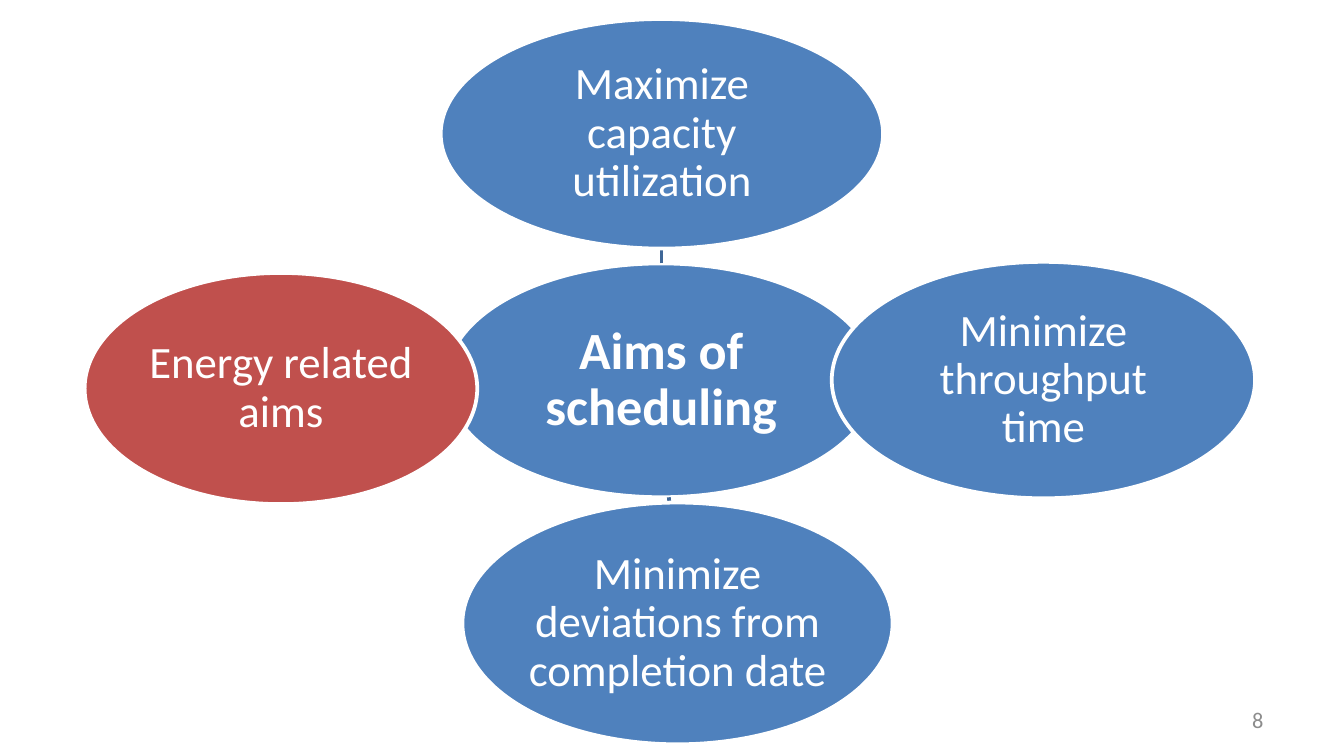
from lxml import etree
from pptx import Presentation
from pptx.dml.color import RGBColor
from pptx.enum import shapes, text
from pptx.oxml import ns
from pptx.util import Cm, Pt

BLUE = RGBColor(0x4F, 0x81, 0xBD)
RED = RGBColor(0xC0, 0x50, 0x4D)
LINK = RGBColor(0x3F, 0x67, 0x97)
WHITE = RGBColor(0xFF, 0xFF, 0xFF)
GRAY = RGBColor(0x8C, 0x8C, 0x8C)
FONT = "Calibri"

HUB = ("Aims of scheduling", (8.43, 4.98, 8.13, 4.42), BLUE)
AIMS = [
    ("Maximize capacity utilization", (8.33, 0.36, 8.36, 4.34), BLUE,
     (12.5, 4.98, 12.5, 4.7)),
    ("Minimize throughput time", (15.72, 4.95, 8, 4.47), BLUE,
     (16.56, 7.19, 15.72, 7.19)),
    ("Minimize deviations from completion date", (8.74, 9.5, 8.13, 4.57), BLUE,
     (12.64, 9.4, 12.65, 9.5)),
    ("Energy related aims", (1.6, 5.16, 7.42, 4.37), RED,
     (8.43, 7.27, 9.02, 7.26)),
]
NUMBER = ("8", (18.21, 13.23, 5.92, 0.76))


def add_text(box, words, size, color, align, bold=False):
    frame = box.text_frame
    frame.word_wrap = True
    frame.vertical_anchor = text.MSO_ANCHOR.MIDDLE
    para = frame.paragraphs[0]
    para.alignment = align
    span = para.add_run()
    span.text = words
    span.font.name = FONT
    span.font.size = Pt(size)
    span.font.bold = bold
    span.font.color.rgb = color
    return para


def add_bubble(page, words, place, fill, size, bold=False):
    bubble = page.shapes.add_shape(shapes.MSO_SHAPE.OVAL, *map(Cm, place))
    bubble.shadow.inherit = False
    bubble.fill.solid()
    bubble.fill.fore_color.rgb = fill
    bubble.line.color.rgb = WHITE
    bubble.line.width = Pt(2)
    frame = bubble.text_frame
    frame.margin_left = frame.margin_right = Cm(0.05)
    frame.margin_top = frame.margin_bottom = Cm(0.05)
    para = add_text(bubble, words, size, WHITE, text.PP_ALIGN.CENTER, bold)
    para.line_spacing = 0.9


def add_link(page, ends):
    link = page.shapes.add_connector(shapes.MSO_CONNECTOR.STRAIGHT, *map(Cm, ends))
    link.line.color.rgb = LINK
    link.line.width = Pt(2)
    etree.SubElement(link._element.spPr, ns.qn("a:effectLst"))


def main():
    deck = Presentation()
    deck.slide_width, deck.slide_height = Cm(25.4), Cm(14.29)
    page = deck.slides.add_slide(deck.slide_layouts[6])

    words, place = NUMBER
    box = page.shapes.add_textbox(*map(Cm, place))
    add_text(box, words, 12, GRAY, text.PP_ALIGN.RIGHT)

    add_bubble(page, *HUB, size=28, bold=True)
    for words, place, fill, ends in AIMS:
        add_link(page, ends)
        add_bubble(page, words, place, fill, size=24)

    deck.save("out.pptx")


if __name__ == "__main__":
    main()
